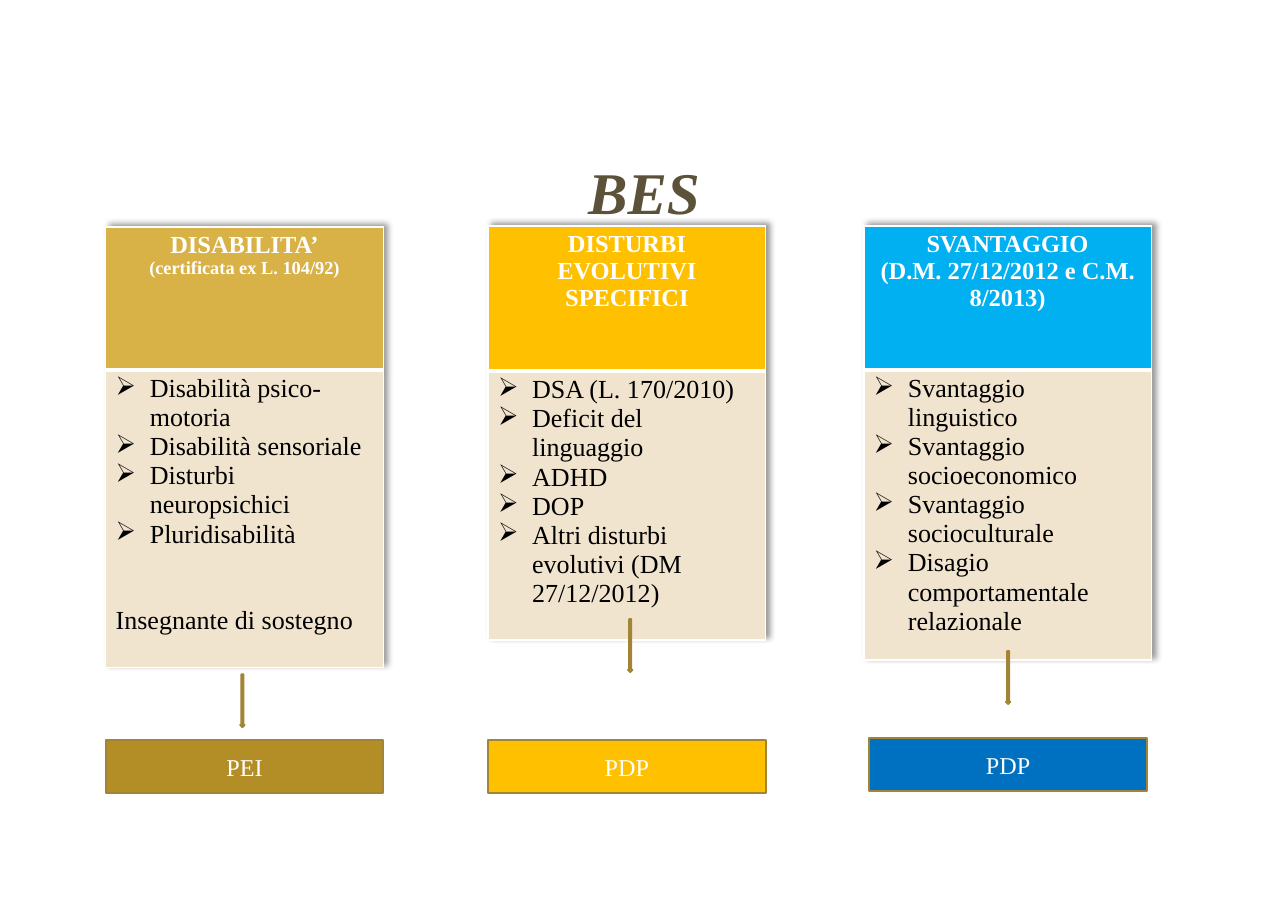
from dataclasses import dataclass

from lxml.etree import SubElement
from pptx import Presentation
from pptx.dml.color import RGBColor
from pptx.enum.shapes import MSO_SHAPE
from pptx.enum.text import MSO_ANCHOR, PP_ALIGN
from pptx.oxml import parse_xml
from pptx.oxml.ns import nsdecls, qn
from pptx.util import Inches, Pt


@dataclass(frozen=True)
class Theme:
    font: str = "Times New Roman"
    title_color: str = "5C5139"
    white: str = "FFFFFF"
    black: str = "000000"
    gold: str = "D9B247"
    dark_gold: str = "B38D25"
    amber: str = "FFC000"
    sky: str = "00B0F0"
    blue: str = "0070C0"
    sand: str = "F1E4CF"
    outline: str = "A18435"
    title_size: float = 38.6
    heading_size: float = 16
    note_size: float = 12
    body_size: float = 17
    plan_size: float = 15.8
    outline_width: float = 1.25


THEME = Theme()
TABLE_SHADOW = (
    f'<a:effectLst {nsdecls("a")}><a:outerShdw blurRad="50800" dist="38100" '
    'dir="18900000" algn="bl" rotWithShape="0"><a:prstClr val="black">'
    '<a:alpha val="40000"/></a:prstClr></a:outerShdw></a:effectLst>'
)


def write(paragraph, text, *, size, color=THEME.white, bold=False, italic=False,
          align=PP_ALIGN.CENTER, bullet=None, space_before=0):
    """Fill one paragraph with formatted text."""
    paragraph.alignment = align
    paragraph.space_before = Pt(space_before)
    if bullet:
        properties = paragraph._p.get_or_add_pPr()
        properties.set("marL", str(Inches(0.31)))
        properties.set("indent", str(-Inches(0.31)))
        SubElement(properties, qn("a:buChar")).set("char", bullet)
    run = paragraph.add_run()
    run.text = text
    run.font.name = THEME.font
    run.font.size = Pt(size)
    run.font.bold = bold
    run.font.italic = italic
    run.font.color.rgb = RGBColor.from_string(color)


class SlideBuilder:
    """Places elements by percentages of the slide's width and height."""

    def __init__(self, presentation, theme):
        self.presentation = presentation
        self.theme = theme
        self.slide = presentation.slides.add_slide(presentation.slide_layouts[6])

    def across(self, share):
        return round(self.presentation.slide_width * share / 100)

    def down(self, share):
        return round(self.presentation.slide_height * share / 100)

    def area(self, left, top, width, height):
        return self.across(left), self.down(top), self.across(width), self.down(height)

    def title(self, text, area):
        frame = self.slide.shapes.add_textbox(*self.area(*area)).text_frame
        frame.word_wrap = True
        frame.margin_top = Inches(0.11)
        frame.margin_bottom = 0
        write(frame.paragraphs[0], text, size=self.theme.title_size,
              color=self.theme.title_color, bold=True, italic=True)

    def shape(self, kind, area, fill, text=None):
        shape = self.slide.shapes.add_shape(kind, *self.area(*area))
        shape.shadow.inherit = False
        shape.fill.solid()
        shape.fill.fore_color.rgb = RGBColor.from_string(fill)
        shape.line.color.rgb = RGBColor.from_string(self.theme.outline)
        shape.line.width = Pt(self.theme.outline_width)
        if text:
            shape.text_frame.vertical_anchor = MSO_ANCHOR.MIDDLE
            write(shape.text_frame.paragraphs[0], text, size=self.theme.plan_size)

    def cell(self, cell, fill, lines, bottom_border):
        # Borders come before the fill in the cell properties
        properties = cell._tc.get_or_add_tcPr()
        for side, width in (("L", 1), ("R", 1), ("T", 1), ("B", bottom_border)):
            border = SubElement(properties, qn(f"a:ln{side}"), w=str(Pt(width)))
            solid = SubElement(border, qn("a:solidFill"))
            SubElement(solid, qn("a:srgbClr"), val=self.theme.white)
        cell.fill.solid()
        cell.fill.fore_color.rgb = RGBColor.from_string(fill)
        cell.margin_left = cell.margin_right = Inches(0.09)
        cell.margin_top = cell.margin_bottom = Inches(0.04)
        frame = cell.text_frame
        for index, (text, style) in enumerate(lines):
            paragraph = frame.add_paragraph() if index else frame.paragraphs[0]
            write(paragraph, text, **style)

    def table(self, left, top, width, row_heights, fill, heading, body):
        area = self.area(left, top, width, sum(row_heights))
        table = self.slide.shapes.add_table(2, 1, *area).table
        table.first_row = table.horz_banding = False
        table._tbl.tblPr.insert(0, parse_xml(TABLE_SHADOW))
        for row, height in zip(table.rows, row_heights):
            row.height = self.down(height)
        self.cell(table.cell(0, 0), fill, heading, bottom_border=3)
        self.cell(table.cell(1, 0), self.theme.sand, body, bottom_border=1)


def headings(*texts):
    return [(text, dict(size=THEME.heading_size, bold=True)) for text in texts]


def bullets(*texts):
    style = dict(size=THEME.body_size, color=THEME.black,
                 align=PP_ALIGN.LEFT, bullet="➢")
    return [(text, style) for text in texts]


def main():
    presentation = Presentation()
    presentation.slide_width = Inches(11.69)
    presentation.slide_height = Inches(8.26)
    builder = SlideBuilder(presentation, THEME)

    builder.title("BES", (10.61, 15.74, 78.79, 7.26))

    # Three categories of special educational needs
    note = ("(certificata ex L. 104/92)", dict(size=THEME.note_size, bold=True))
    support = ("Insegnante di sostegno",
               dict(size=THEME.body_size, color=THEME.black,
                    align=PP_ALIGN.LEFT, space_before=37.7))
    builder.table(
        8.21, 24.94, 21.56, (15.74, 32.69), THEME.gold,
        headings("DISABILITA’") + [note],
        bullets("Disabilità psico-motoria", "Disabilità sensoriale",
                "Disturbi neuropsichici", "Pluridisabilità") + [support])
    builder.table(
        37.9, 24.82, 21.56, (15.98, 29.54), THEME.amber,
        headings("DISTURBI EVOLUTIVI SPECIFICI"),
        bullets("DSA (L. 170/2010)", "Deficit del linguaggio", "ADHD", "DOP",
                "Altri disturbi evolutivi (DM 27/12/2012)"))
    builder.table(
        67.07, 24.82, 22.33, (15.86, 29.18), THEME.sky,
        headings("SVANTAGGIO", "(D.M. 27/12/2012 e C.M. 8/2013)"),
        bullets("Svantaggio linguistico", "Svantaggio socioeconomico",
                "Svantaggio socioculturale",
                "Disagio comportamentale relazionale"))

    # Arrows down to the plan for each category
    for left, top in ((18.65, 74.09), (48.76, 68.04), (78.1, 71.55)):
        builder.shape(MSO_SHAPE.DOWN_ARROW, (left, top, 0.34, 5.81), THEME.gold)

    # Plans
    for text, left, top, fill in (("PEI", 8.21, 81.36, THEME.dark_gold),
                                  ("PDP", 37.9, 81.36, THEME.amber),
                                  ("PDP", 67.49, 81.11, THEME.blue)):
        builder.shape(MSO_SHAPE.RECTANGLE, (left, top, 21.56, 5.81), fill, text)

    presentation.save("out.pptx")


if __name__ == "__main__":
    main()
